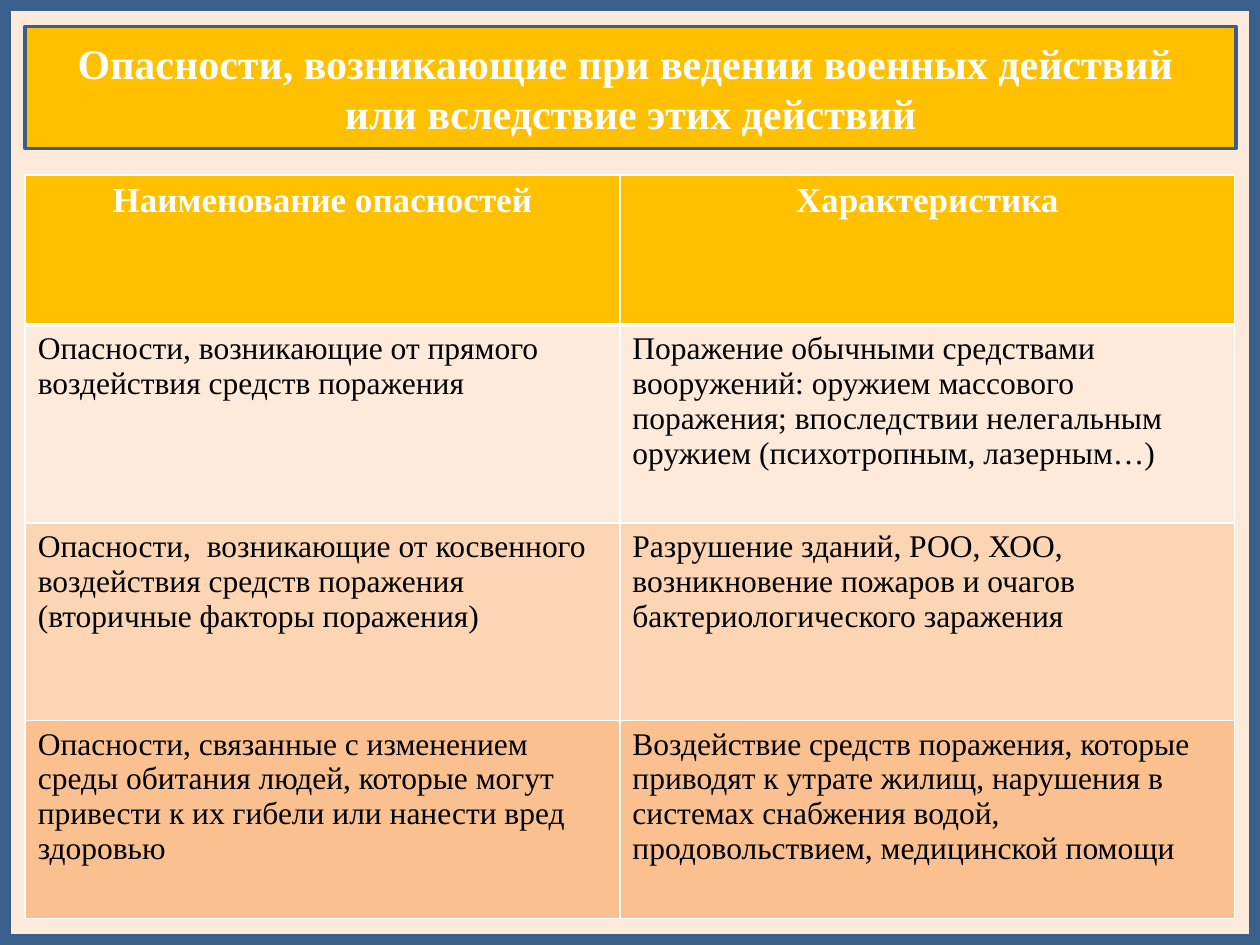
from lxml.etree import SubElement
from pptx import Presentation
from pptx.dml.color import RGBColor
from pptx.enum.shapes import MSO_SHAPE
from pptx.enum.text import MSO_ANCHOR, MSO_AUTO_SIZE, PP_ALIGN
from pptx.oxml import parse_xml
from pptx.oxml.ns import nsdecls
from pptx.util import Inches, Pt

COLORS = {
    "frame": "3A5F8C", "gold": "FFC000", "white": "FFFFFF", "black": "000000",
    "cream": "FDEADA", "peach": "FCD5B5", "orange": "FAC090",
}
FORMATS = {
    "title": {"name": "Times New Roman", "size": Pt(24), "bold": True},
    "header": {"name": "Times New Roman", "size": Pt(20), "bold": True},
    "body": {"name": "Times New Roman", "size": Pt(18), "bold": False},
}
TITLE_LINES = [
    "Опасности, возникающие при ведении военных действий ",
    "или вследствие этих действий",
]
ROWS = [
    ("gold", "Наименование опасностей", "Характеристика"),
    ("cream",
     "Опасности, возникающие от прямого воздействия средств поражения",
     "Поражение обычными средствами вооружений: оружием массового поражения; "
     "впоследствии нелегальным оружием (психотропным, лазерным…)"),
    ("peach",
     "Опасности,  возникающие от косвенного воздействия средств поражения "
     "(вторичные факторы поражения)",
     "Разрушение зданий, РОО, ХОО, возникновение пожаров и очагов "
     "бактериологического заражения"),
    ("orange",
     "Опасности, связанные с изменением среды обитания людей, которые могут "
     "привести к их гибели или нанести вред здоровью",
     "Воздействие средств поражения, которые приводят к утрате жилищ, нарушения "
     "в системах снабжения водой, продовольствием, медицинской помощи"),
]
COLUMN_WIDTHS = [4.72, 4.88]
ROW_HEIGHTS = [1.19, 1.57, 1.57, 1.57]


def write_lines(text_frame, lines, style, color, alignment):
    text_frame.text = "\n".join(lines)
    for paragraph in text_frame.paragraphs:
        paragraph.alignment = alignment
        font = paragraph.runs[0].font
        for attribute, value in FORMATS[style].items():
            setattr(font, attribute, value)
        font.color.rgb = RGBColor.from_string(COLORS[color])


def paint(shape, fill, line_width):
    shape.fill.solid()
    shape.fill.fore_color.rgb = RGBColor.from_string(COLORS[fill])
    shape.line.color.rgb = RGBColor.from_string(COLORS["frame"])
    shape.line.width = Pt(line_width)
    shape.shadow.inherit = False


presentation = Presentation()
presentation.slide_width = Inches(10)
presentation.slide_height = Inches(7.5)
slide = presentation.slides.add_slide(presentation.slide_layouts[5])

frame = slide.shapes.add_shape(MSO_SHAPE.RECTANGLE, 0, 0, Inches(10), Inches(7.5))
paint(frame, "cream", 12.25)

title = slide.shapes.title
frame._element.addnext(title._element)
title.left, title.top = Inches(0.2), Inches(0.21)
title.width, title.height = Inches(9.61), Inches(0.97)
title._element.spPr.append(parse_xml(
    f'<a:prstGeom {nsdecls("a")} prst="roundRect"><a:avLst/></a:prstGeom>'))
paint(title, "gold", 2)
title.text_frame.auto_size = MSO_AUTO_SIZE.NONE
title.text_frame.vertical_anchor = MSO_ANCHOR.MIDDLE
write_lines(title.text_frame, TITLE_LINES, "title", "white", PP_ALIGN.CENTER)

table = slide.shapes.add_table(
    len(ROWS), len(COLUMN_WIDTHS), Inches(0.2), Inches(1.39),
    Inches(sum(COLUMN_WIDTHS)), Inches(sum(ROW_HEIGHTS))).table
for column, width in zip(table.columns, COLUMN_WIDTHS):
    column.width = Inches(width)

for row_index, (fill, *texts) in enumerate(ROWS):
    table.rows[row_index].height = Inches(ROW_HEIGHTS[row_index])
    is_header = row_index == 0
    for column_index, text in enumerate(texts):
        cell = table.cell(row_index, column_index)
        if is_header:
            write_lines(cell.text_frame, [text], "header", "white", PP_ALIGN.CENTER)
        else:
            write_lines(cell.text_frame, [text], "body", "black", PP_ALIGN.LEFT)
        cell.fill.solid()
        cell.fill.fore_color.rgb = RGBColor.from_string(COLORS[fill])

        border_widths = {"lnL": 1, "lnR": 1, "lnT": 3 if row_index == 1 else 1,
                         "lnB": 3 if is_header else 1}
        properties = cell._tc.get_or_add_tcPr()
        for position, (side, width) in enumerate(border_widths.items()):
            border = parse_xml(f'<a:{side} {nsdecls("a")} w="{Pt(width)}"/>')
            solid = SubElement(border, border.tag.replace(side, "solidFill"))
            SubElement(solid, border.tag.replace(side, "srgbClr"), val=COLORS["white"])
            properties.insert(position, border)

presentation.save("out.pptx")
